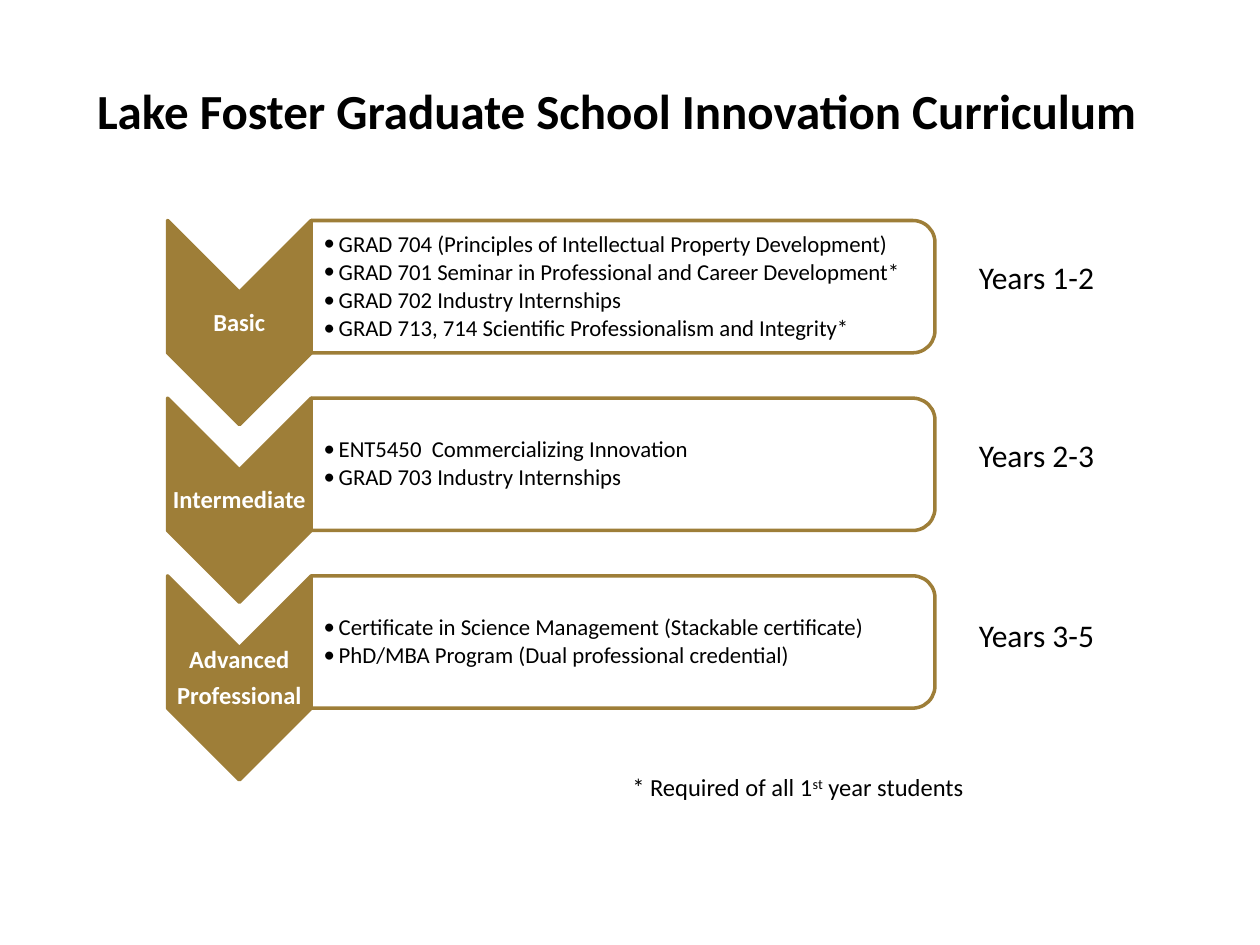
import pptx
import pptx.util
import pptx.dml.color
import pptx.enum.shapes
import pptx.enum.text
import pptx.oxml.ns
from dataclasses import dataclass
from lxml import etree

SHAPE = pptx.enum.shapes.MSO_SHAPE
ALIGN = pptx.enum.text.PP_ALIGN
ANCHOR = pptx.enum.text.MSO_ANCHOR
AUTO = pptx.enum.text.MSO_AUTO_SIZE
qn = pptx.oxml.ns.qn


@dataclass(frozen=True)
class Theme:
    font: str = "Calibri"
    gold: str = "9E7E38"
    white: str = "FFFFFF"
    black: str = "000000"
    title: int = 28
    years: int = 18
    label: int = 14
    bullet: int = 13
    note: int = 14


def px(n):
    """100 px to the inch."""
    return pptx.util.Emu(n * 9144)


def rgb(value):
    return pptx.dml.color.RGBColor.from_string(value)


class Deck:
    def __init__(self, theme):
        self.theme = theme
        self.prs = pptx.Presentation()
        self.prs.slide_width, self.prs.slide_height = px(1000), px(750)
        self.s = self.prs.slides.add_slide(self.prs.slide_layouts[5])

    def run(self, p, text, size, color, bold=False, baseline=0):
        r = p.add_run()
        r.text = text
        r.font.name, r.font.size = self.theme.font, pptx.util.Pt(size)
        r.font.bold, r.font.color.rgb = bold, rgb(color)
        if baseline:
            r.font._element.set("baseline", str(baseline * 1000))

    def title(self, text, x, y, w, h):
        sp = self.s.shapes.title
        sp.left, sp.top, sp.width, sp.height = map(px, (x, y, w, h))
        tf = sp.text_frame
        tf.word_wrap, tf.auto_size = False, AUTO.SHAPE_TO_FIT_TEXT
        tf.vertical_anchor = ANCHOR.TOP
        p = tf.paragraphs[0]
        p.alignment = ALIGN.LEFT
        self.run(p, text, self.theme.title, self.theme.black, bold=True)

    def line_text(self, x, y, w, h, size, *runs):
        """One unwrapped line made of (text, baseline) runs."""
        tf = self.s.shapes.add_textbox(*map(px, (x, y, w, h))).text_frame
        tf.word_wrap, tf.auto_size = False, AUTO.SHAPE_TO_FIT_TEXT
        for text, baseline in runs:
            self.run(tf.paragraphs[0], text, size, self.theme.black, baseline=baseline)

    def turned(self, kind, x, y, w, h, fill):
        """A gold-edged shape turned a quarter; the frame is given unturned."""
        sp = self.s.shapes.add_shape(kind, *map(px, (x, y, w, h)))
        sp.rotation = 90
        sp.shadow.inherit = False
        sp.fill.solid()
        sp.fill.fore_color.rgb = rgb(fill)
        sp.line.color.rgb = rgb(self.theme.gold)
        sp.line.width = pptx.util.Pt(2)

    def block(self, x, y, w, h, lines, size, color, after, left=1, bold=False, bullets=False):
        """Tight paragraphs, vertically centred; after is a share of the size."""
        tf = self.s.shapes.add_textbox(*map(px, (x, y, w, h))).text_frame
        tf.word_wrap, tf.vertical_anchor = True, ANCHOR.MIDDLE
        tf.margin_left = px(left)
        tf.margin_right = tf.margin_top = tf.margin_bottom = px(1)
        for i, text in enumerate(lines):
            p = tf.add_paragraph() if i else tf.paragraphs[0]
            p.line_spacing = 0.9
            p.space_after = pptx.util.Pt(size * after)
            self.run(p, text, size, color, bold)
            if bullets:
                self.bullet(p)
            else:
                p.alignment = ALIGN.CENTER

    def bullet(self, p):
        p.level = 1
        pPr = p._p.get_or_add_pPr()
        pPr.set("marL", str(px(12)))
        pPr.set("indent", str(-px(12)))
        etree.SubElement(pPr, qn("a:buFont")).set("typeface", self.theme.font)
        etree.SubElement(pPr, qn("a:buChar")).set("char", "•")

    def stage(self, y, label, courses):
        """A chevron with its label and the course panel beside it."""
        t = self.theme
        self.turned(SHAPE.CHEVRON, 109, y, 162, 114, t.gold)
        self.block(133, y + 33, 114, 49, label, t.label, t.white, 0.35, bold=True)
        self.turned(SHAPE.ROUND_2_SAME_RECTANGLE, 442, y - 219, 105, 495, t.white)
        self.block(247, y - 19, 490, 95, courses, t.bullet, t.black, 0.15, left=10, bullets=True)


STAGES = [
    (["Basic"], "Years 1-2", 200, [
        "GRAD 704 (Principles of Intellectual Property Development)",
        "GRAD 701 Seminar in Professional and Career Development*",
        "GRAD 702 Industry Internships",
        "GRAD 713, 714 Scientific Professionalism and Integrity*"]),
    (["Intermediate"], "Years 2-3", 341, [
        "ENT5450  Commercializing Innovation",
        "GRAD 703 Industry Internships"]),
    (["Advanced", "Professional"], "Years 3-5", 484, [
        "Certificate in Science Management (Stackable certificate)",
        "PhD/MBA Program (Dual professional credential)"]),
]


def main():
    theme = Theme()
    deck = Deck(theme)

    # Title
    deck.title("Lake Foster Graduate School Innovation Curriculum", 67, 59, 872, 57)

    # Stages with their years
    for i, (label, years, years_y, courses) in enumerate(STAGES):
        deck.stage(199 + 141 * i, label, courses)
        deck.line_text(767, years_y, 113, 40, theme.years, (years, 0))

    # Footnote
    deck.line_text(492, 608, 287, 34, theme.note,
                   ("* Required of all 1", 0), ("st", 30), (" year students", 0))

    deck.prs.save("out.pptx")


if __name__ == "__main__":
    main()
